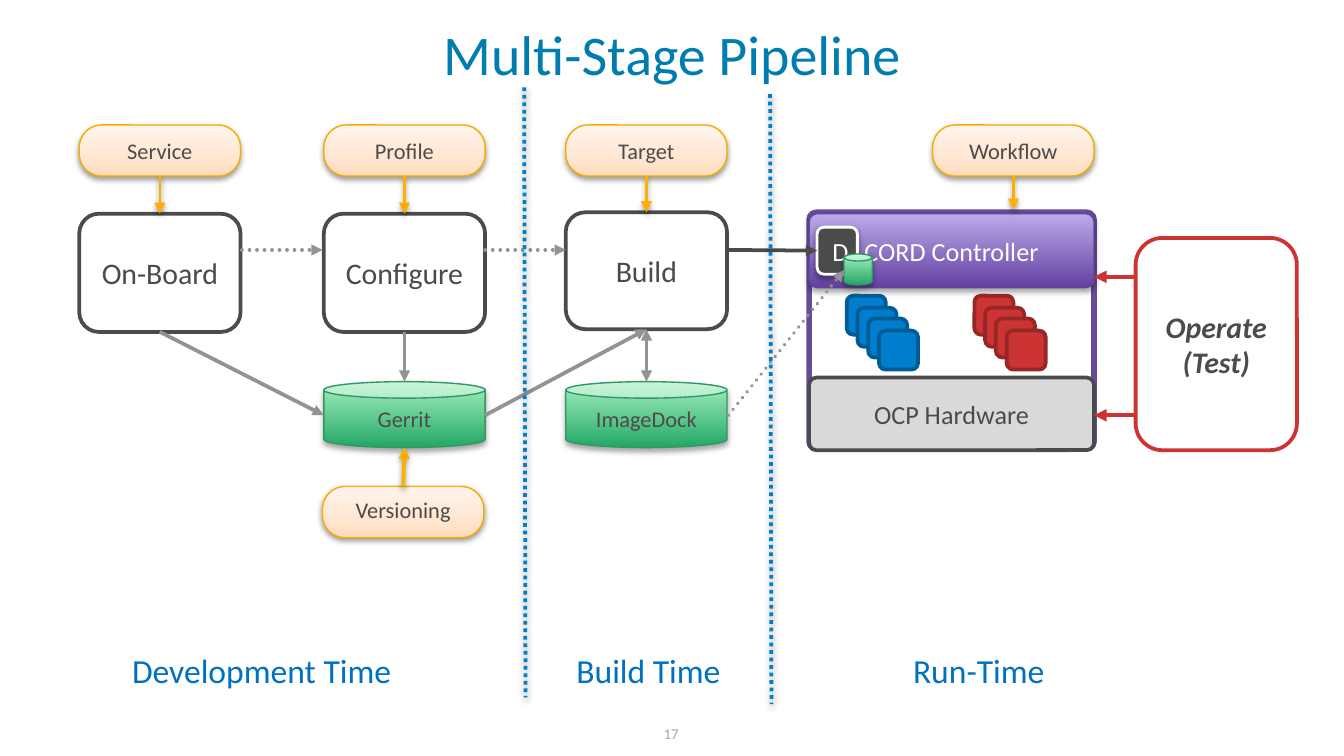
from lxml.etree import SubElement
from pptx import Presentation
from pptx.dml.color import RGBColor
from pptx.enum.dml import MSO_LINE
from pptx.enum.shapes import MSO_CONNECTOR, MSO_SHAPE
from pptx.enum.text import MSO_ANCHOR, PP_ALIGN
from pptx.oxml.ns import qn
from pptx.util import Emu, Pt

EMU_PER_PX = 9144  # 100 px to the inch
TOP, LEFT, BOTTOM = 0, 1, 2  # connection sites
COLORS = {
    "white": "FFFFFF", "ink": "4B4B4B", "title": "007DAF", "phase": "0070C0",
    "page": "A6A6A6", "gray": "939393", "hardware": "D9D9D9",
    "gold": "FFAF00", "gold_edge": "F9AB00",
    "blue": "007DCC", "blue_edge": "005C97",
    "red": "CC3333", "red_edge": "972626",
    "purple_frame": "664B97", "purple_edge": "634796", "green_edge": "2F9864",
}
GRADIENTS = {
    "peach": [(0, "FFDCBD"), (35, "FFE6D1"), (100, "FFF5EE")],
    "purple": [(0, "6340A2"), (100, "BCABEA")],
    "green": [(0, "24A866"), (100, "A4EFBF")],
}
SOFT = (38, 1.6)  # shadow opacity in percent, distance in points
DEEP = (35, 1.8)


def px(length):
    return Emu(length * EMU_PER_PX)


def rgb(name):
    return RGBColor.from_string(COLORS[name])


def write(shape, lines, size, color, align=PP_ALIGN.CENTER, spacing=None,
          emphasis=False):
    frame = shape.text_frame
    for index, line in enumerate(lines):
        paragraph = frame.add_paragraph() if index else frame.paragraphs[0]
        paragraph.alignment = align
        if spacing:
            paragraph.line_spacing = spacing
        run = paragraph.add_run()
        run.text = line
        run.font.name = "Calibri"
        run.font.size = Pt(size)
        run.font.color.rgb = rgb(color)
        if emphasis:
            run.font.bold = run.font.italic = True


def add_shadow(effects, shadow):
    opacity, distance = shadow
    outer = SubElement(effects, qn("a:outerShdw"), blurRad=str(Pt(3.1)),
                       dist=str(Pt(distance)), dir="5400000", rotWithShape="0")
    color = SubElement(outer, qn("a:srgbClr"), val="000000")
    SubElement(color, qn("a:alpha"), val=str(opacity * 1000))


def fill_gradient(shape, stops):
    shape.fill.gradient()
    shape.fill.gradient_angle = 90
    stop_list = shape.element.spPr.find(".//" + qn("a:gsLst"))
    for stop in list(stop_list):
        stop_list.remove(stop)
    for position, color in stops:
        stop = SubElement(stop_list, qn("a:gs"), pos=str(position * 1000))
        SubElement(stop, qn("a:srgbClr"), val=color)


def add_box(slide, box, fill, edge, width=2, lines=(), size=16, color="ink",
            kind=MSO_SHAPE.ROUNDED_RECTANGLE, corner=None, shadow=None, **text):
    shape = slide.shapes.add_shape(kind, *map(px, box))
    if corner is not None:
        shape.adjustments[0] = corner
    if fill in GRADIENTS:
        fill_gradient(shape, GRADIENTS[fill])
    else:
        shape.fill.solid()
        shape.fill.fore_color.rgb = rgb(fill)
    shape.line.color.rgb = rgb(edge)
    shape.line.width = Pt(width)
    shape.shadow.inherit = False
    if shadow:
        add_shadow(shape.element.spPr.find(qn("a:effectLst")), shadow)
    shape.text_frame.vertical_anchor = MSO_ANCHOR.MIDDLE
    write(shape, lines, size, color, **text)
    return shape


def add_input(slide, x, y, label, **text):
    return add_box(slide, (x, y, 120, 38), "peach", "gold_edge", 0.75, [label],
                   12, corner=0.44, shadow=SOFT, **text)


def add_store(slide, box, lines=()):
    return add_box(slide, box, "green", "green_edge", 0.75, lines, 12,
                   kind=MSO_SHAPE.CAN, shadow=DEEP)


def add_stack(slide, x, y, color):
    for step in range(4):
        add_box(slide, (x + 8 * step, y + round(26 * step / 3), 29, 29),
                color, color + "_edge")


def add_line(slide, start, end, color, width=2, dotted=False, round_dots=False,
             heads=("tailEnd",), shadow=None, begin=None, finish=None):
    line = slide.shapes.add_connector(MSO_CONNECTOR.STRAIGHT,
                                      *map(px, start + end))
    if begin:
        line.begin_connect(*begin)
    if finish:
        line.end_connect(*finish)
    line.line.color.rgb = rgb(color)
    line.line.width = Pt(width)
    if dotted:
        line.line.dash_style = MSO_LINE.ROUND_DOT
    properties = line._element.spPr
    outline = properties.find(qn("a:ln"))
    if round_dots:
        outline.set("cap", "rnd")
    for head in heads:
        SubElement(outline, qn("a:" + head), type="triangle")
    effects = SubElement(properties, qn("a:effectLst"))
    if shadow:
        add_shadow(effects, shadow)


def add_label(slide, box, text, size, color, align, wrap):
    label = slide.shapes.add_textbox(*map(px, box))
    label.text_frame.word_wrap = wrap
    write(label, [text], size, color, align)
    return label


def add_title(slide, text):
    title = slide.shapes.title
    title.left, title.top, title.width, title.height = map(px, (50, 12, 900, 58))
    title.text_frame.vertical_anchor = MSO_ANCHOR.TOP
    write(title, [text], 30, "title", spacing=Pt(34))


def add_runtime(slide):
    # Controller, service stacks and hardware
    add_box(slide, (602, 158, 212, 176), "white", "purple_frame", 3, corner=0.03)
    add_box(slide, (602, 159, 212, 55), "purple", "purple_edge", 0.75,
            ["CORD Controller"], 14, "white", corner=0.11, shadow=DEEP)
    add_stack(slide, 630, 220, "blue")
    add_stack(slide, 725, 220, "red")
    add_box(slide, (602, 281, 212, 54), "hardware", "ink", 2,
            ["OCP Hardware"], 14, corner=0.1)

    # Operations
    add_box(slide, (845, 177, 120, 158), "white", "red", 2,
            ["Operate", "(Test)"], emphasis=True)
    for y in (206, 309):
        add_line(slide, (845, y), (814, y), "red", 2.25)

    workflow = add_input(slide, 694, 93, "Workflow")
    add_line(slide, (754, 131), (754, 156), "gold", 1.5, shadow=SOFT,
             begin=(workflow, BOTTOM))
    return add_box(slide, (608, 169, 30, 35), "ink", "white", 1.5, ["D"], 14,
                   "white", shadow=SOFT)


def main():
    presentation = Presentation()
    presentation.slide_width = px(1000)
    presentation.slide_height = px(1000) * 9 // 16
    slide = presentation.slides.add_slide(presentation.slide_layouts[5])
    add_title(slide, "Multi-Stage Pipeline")
    page = add_label(slide, (383, 531, 233, 30), "17", 8, "page",
                     PP_ALIGN.CENTER, True)
    page.text_frame.vertical_anchor = MSO_ANCHOR.MIDDLE

    # Stages, each with its input above
    stages = []
    for x, y, height, name, source in ((59, 159, 88, "On-Board", "Service"),
                                       (241, 159, 88, "Configure", "Profile"),
                                       (421, 158, 87, "Build", "Target")):
        stage = add_box(slide, (x, y, 120, height), "white", "ink", 2, [name])
        entry = add_input(slide, x, 93, source)
        add_line(slide, (x + 60, 131), (x + 60, y), "gold", 1.5, shadow=SOFT,
                 begin=(entry, BOTTOM), finish=(stage, TOP))
        stages.append(stage)
    onboard, configure, build = stages

    deployment = add_runtime(slide)
    add_line(slide, (542, 186), (608, 186), "ink", finish=(deployment, LEFT))

    # Stores and the flows between them
    add_store(slide, (241, 284, 120, 49), ["Gerrit"])
    add_store(slide, (421, 284, 120, 49), ["ImageDock"])
    for x in (180, 361):
        add_line(slide, (x, 186), (x + 60, 186), "gray", dotted=True,
                 round_dots=True)
    add_line(slide, (120, 247), (241, 309), "gray", begin=(onboard, BOTTOM))
    add_line(slide, (301, 247), (301, 284), "gray", begin=(configure, BOTTOM))
    add_line(slide, (361, 309), (481, 245), "gray", finish=(build, BOTTOM))
    add_line(slide, (481, 245), (481, 284), "gray", heads=("headEnd", "tailEnd"),
             begin=(build, BOTTOM))

    # Phase dividers and names
    for x, y in ((390, 65), (573, 70)):
        add_line(slide, (x, y), (x + 1, y + 454), "blue", dotted=True, heads=(),
                 shadow=SOFT)
    for x, width, phase in ((86, 215, "Development Time"),
                            (417, 129, "Build Time"),
                            (668, 119, "Run-Time")):
        add_label(slide, (x, 479, width, 40), phase, 18, "phase",
                  PP_ALIGN.RIGHT, False)

    # Versioning and the deployed image
    versioning = add_input(slide, 240, 362, "Versioning", spacing=0.8)
    add_line(slide, (301, 333), (301, 362), "gold", heads=("headEnd",),
             shadow=SOFT, finish=(versioning, TOP))
    add_store(slide, (628, 189, 21, 23))
    add_line(slide, (542, 309), (628, 201), "gray", dotted=True, round_dots=True)

    presentation.save("out.pptx")


if __name__ == "__main__":
    main()
